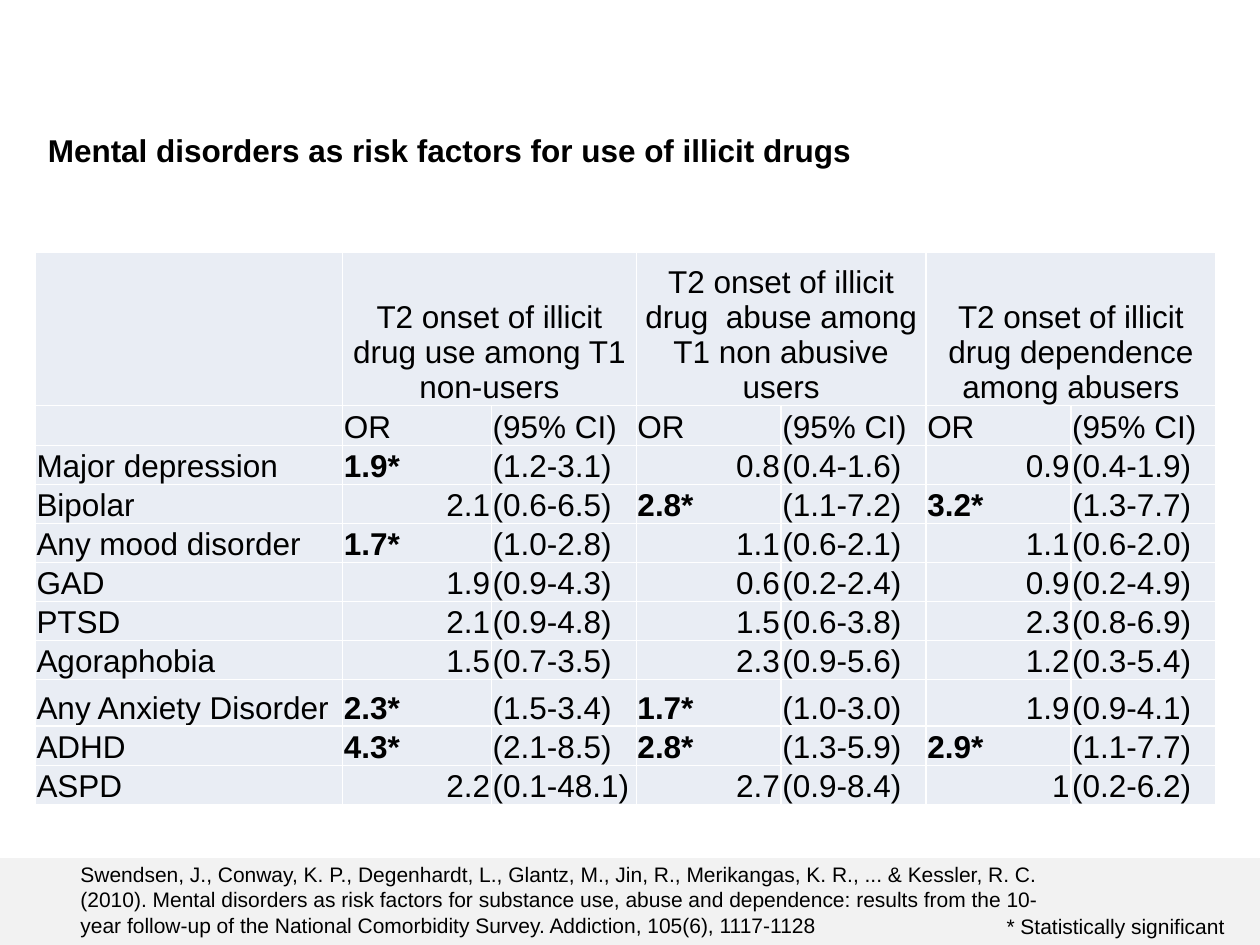
from pptx import Presentation
from pptx.dml.color import RGBColor
from pptx.enum.shapes import MSO_SHAPE as SHAPE
from pptx.enum.text import MSO_ANCHOR as ANCHOR, PP_ALIGN as ALIGN
from pptx.oxml import parse_xml
from pptx.oxml.ns import nsdecls
from pptx.util import Inches, Pt

FONT = "Arial"
BLACK, WHITE, BAND, CELL = "000000", "FFFFFF", "F2F2F2", "E9EDF4"
TITLE = "Mental disorders as risk factors for use of illicit drugs"
CITATION = (
    "Swendsen, J., Conway, K. P., Degenhardt, L., Glantz, M., Jin, R., "
    "Merikangas, K. R., ... & Kessler, R. C. (2010). Mental disorders as risk "
    "factors for substance use, abuse and dependence: results from the "
    "10‐year follow‐up of the National Comorbidity Survey. "
    "Addiction, 105(6), 1117-1128"
)
GROUPS = [
    "T2 onset of illicit drug use among T1 non-users",
    "T2 onset of illicit drug  abuse among T1 non abusive users",
    "T2 onset of illicit drug dependence among abusers",
]
RESULTS = [
    ["Major depression", "1.9*", "(1.2-3.1)", "0.8", "(0.4-1.6)", "0.9", "(0.4-1.9)"],
    ["Bipolar", "2.1", "(0.6-6.5)", "2.8*", "(1.1-7.2)", "3.2*", "(1.3-7.7)"],
    ["Any mood disorder", "1.7*", "(1.0-2.8)", "1.1", "(0.6-2.1)", "1.1", "(0.6-2.0)"],
    ["GAD", "1.9", "(0.9-4.3)", "0.6", "(0.2-2.4)", "0.9", "(0.2-4.9)"],
    ["PTSD", "2.1", "(0.9-4.8)", "1.5", "(0.6-3.8)", "2.3", "(0.8-6.9)"],
    ["Agoraphobia", "1.5", "(0.7-3.5)", "2.3", "(0.9-5.6)", "1.2", "(0.3-5.4)"],
    ["Any Anxiety Disorder", "2.3*", "(1.5-3.4)", "1.7*", "(1.0-3.0)", "1.9", "(0.9-4.1)"],
    ["ADHD", "4.3*", "(2.1-8.5)", "2.8*", "(1.3-5.9)", "2.9*", "(1.1-7.7)"],
    ["ASPD", "2.2", "(0.1-48.1)", "2.7", "(0.9-8.4)", "1", "(0.2-6.2)"],
]
COL_WIDTHS = [2.44, 1.18] + [1.15] * 5
ROW_HEIGHTS = [1.22] + [0.31] * 7 + [0.37] + [0.31] * 2


def color(value):
    return RGBColor.from_string(value)


def write(tf, text, size, bold=False, align=ALIGN.LEFT):
    p = tf.paragraphs[0]
    p.alignment = align
    r = p.add_run()
    r.text = text
    r.font.name = FONT
    r.font.size = Pt(size)
    r.font.bold = bold
    r.font.color.rgb = color(BLACK)


def add_band(s):
    sp = s.shapes.add_shape(SHAPE.RECTANGLE, 0, Inches(6.81), Inches(10), Inches(0.69))
    sp.shadow.inherit = False
    sp.fill.solid()
    sp.fill.fore_color.rgb = color(BAND)
    sp.line.fill.background()


def set_title(s):
    sp = s.shapes.title
    sp.left, sp.top, sp.width, sp.height = (Inches(v) for v in (0.28, 0.99, 7.09, 0.4))
    sp.text_frame.vertical_anchor = ANCHOR.TOP
    write(sp.text_frame, TITLE, 18, bold=True)


def add_note(s, text, left, top, width, height):
    sp = s.shapes.add_textbox(Inches(left), Inches(top), Inches(width), Inches(height))
    sp.text_frame.word_wrap = True
    write(sp.text_frame, text, 12)


def style_cell(cell):
    cell.margin_left = cell.margin_right = cell.margin_top = Inches(0.01)
    cell.margin_bottom = 0
    cell.vertical_anchor = ANCHOR.BOTTOM
    tc_pr = cell._tc.get_or_add_tcPr()
    for side in ("lnL", "lnR", "lnT", "lnB"):
        tc_pr.append(parse_xml(
            f'<a:{side} {nsdecls("a")} w="12700"><a:solidFill>'
            f'<a:srgbClr val="{WHITE}"/></a:solidFill></a:{side}>'
        ))
    cell.fill.solid()
    cell.fill.fore_color.rgb = color(CELL)


def add_results(s):
    rows, cols = len(ROW_HEIGHTS), len(COL_WIDTHS)
    table = s.shapes.add_table(
        rows, cols, Inches(0.28), Inches(2),
        Inches(sum(COL_WIDTHS)), Inches(sum(ROW_HEIGHTS)),
    ).table
    table.first_row = table.horz_banding = False
    for col, width in zip(table.columns, COL_WIDTHS):
        col.width = Inches(width)
    for row, height in zip(table.rows, ROW_HEIGHTS):
        row.height = Inches(height)
    for cell in table.iter_cells():
        style_cell(cell)

    for i, text in enumerate(GROUPS):
        cell = table.cell(0, 2 * i + 1)
        cell.merge(table.cell(0, 2 * i + 2))
        write(cell.text_frame, text, 18, align=ALIGN.CENTER)

    body = [[""] + ["OR", "(95% CI)"] * len(GROUPS)] + RESULTS
    for i, values in enumerate(body, 1):
        for j, text in enumerate(values):
            if text:
                align = ALIGN.RIGHT if text[0].isdigit() and text[-1] != "*" else ALIGN.LEFT
                write(table.cell(i, j).text_frame, text, 18, text.endswith("*"), align)


def main():
    prs = Presentation()
    prs.slide_width, prs.slide_height = Inches(10), Inches(7.5)
    s = prs.slides.add_slide(prs.slide_layouts[5])
    add_band(s)
    add_results(s)
    set_title(s)
    add_note(s, "* Statistically significant", 7.89, 7.2, 2.46, 0.3)
    add_note(s, CITATION, 0.54, 6.79, 8.11, 0.71)
    prs.save("out.pptx")


if __name__ == "__main__":
    main()
